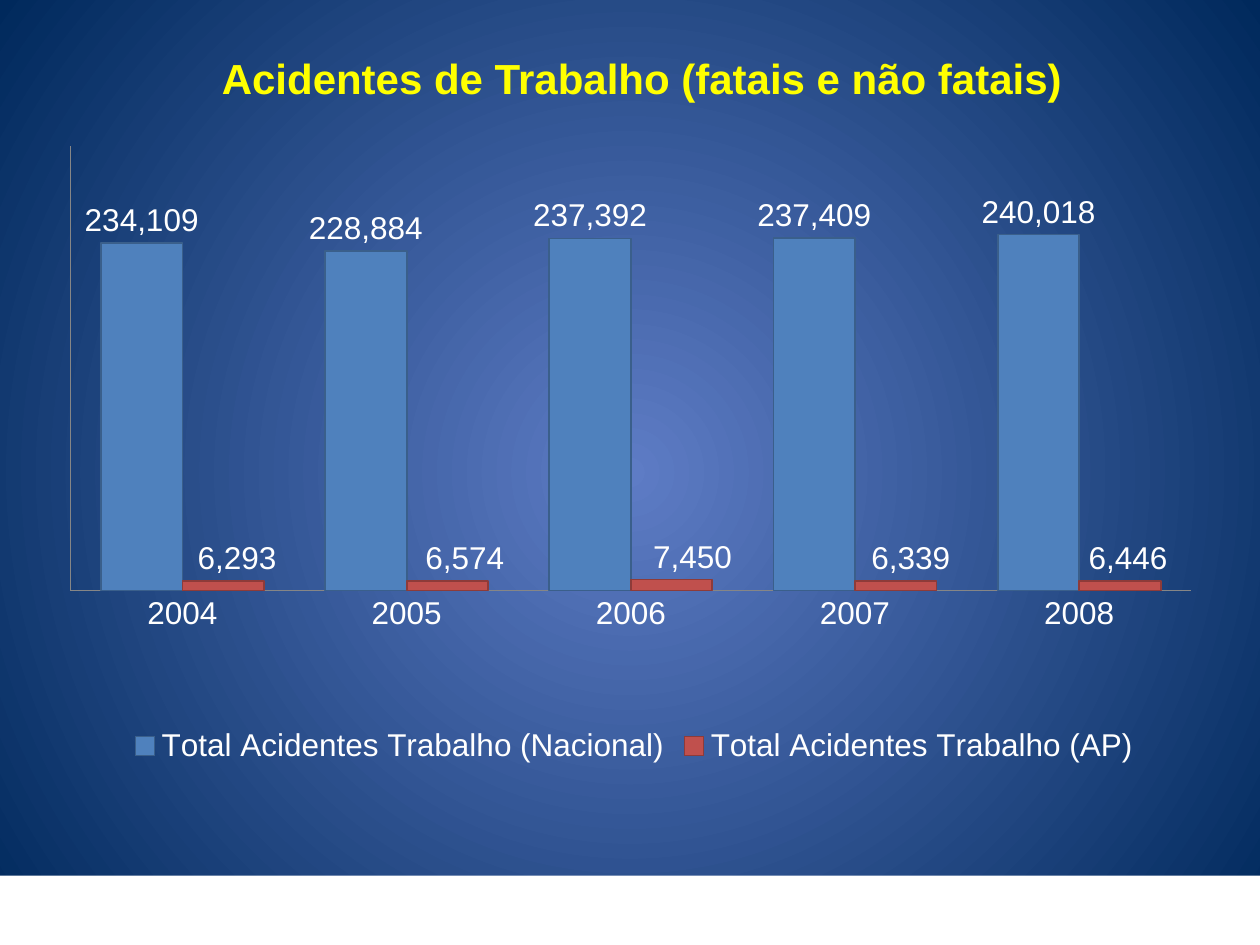
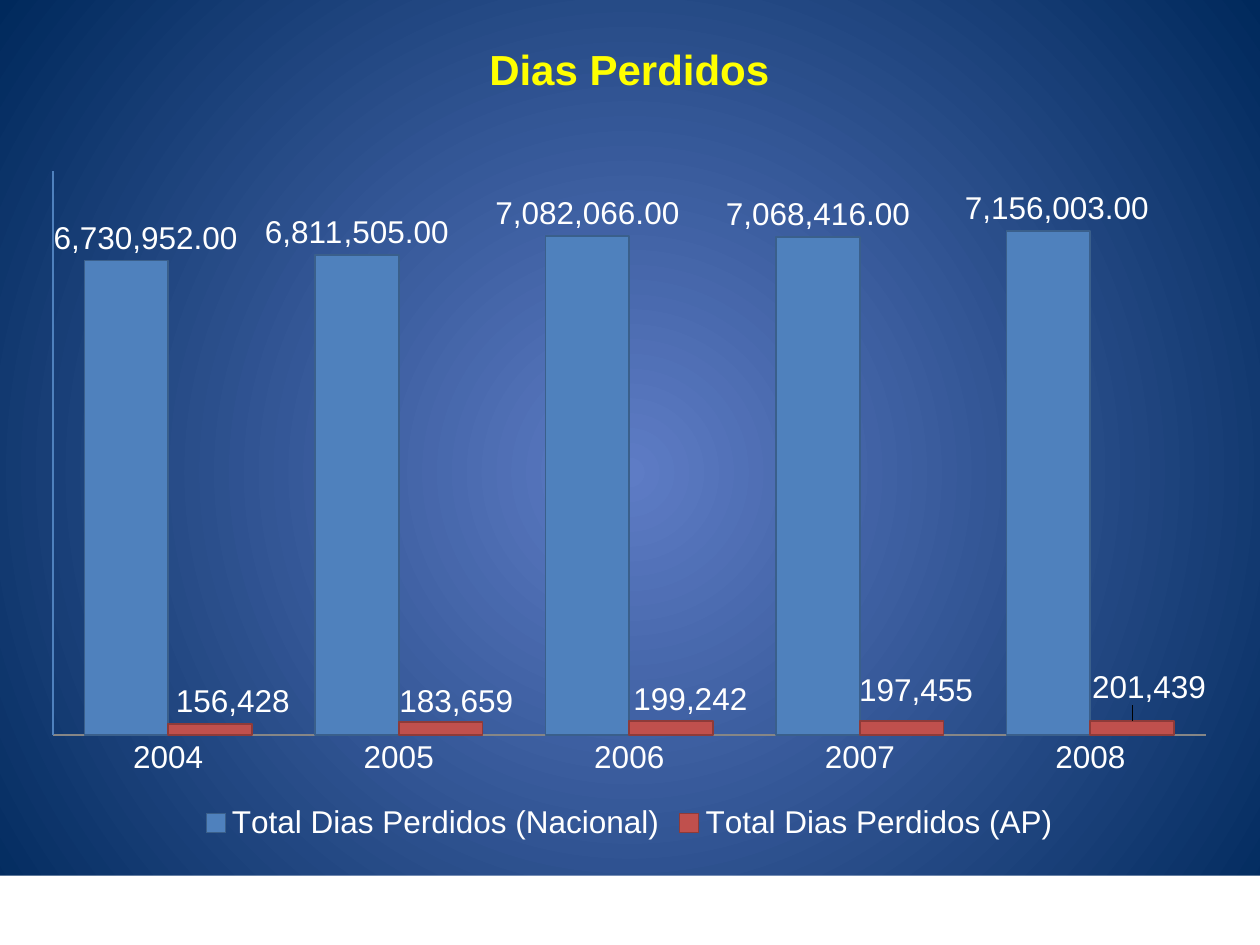
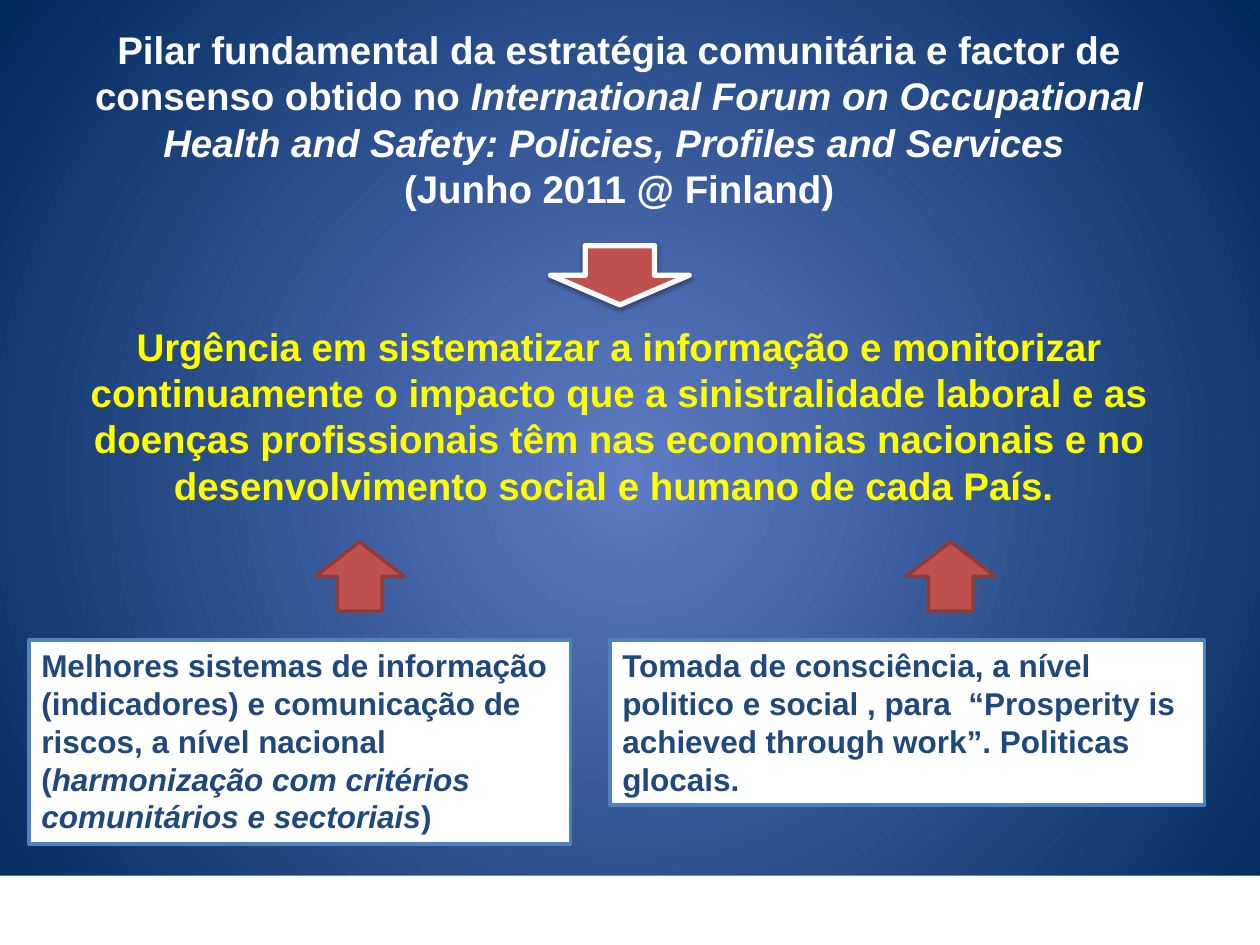
from pptx import Presentation
from pptx.chart.data import CategoryChartData
from pptx.dml.color import RGBColor
from pptx.enum.chart import (XL_CHART_TYPE, XL_LABEL_POSITION, XL_LEGEND_POSITION,
                             XL_TICK_LABEL_POSITION, XL_TICK_MARK)
from pptx.enum.shapes import MSO_SHAPE
from pptx.enum.text import MSO_ANCHOR, PP_ALIGN
from pptx.oxml import parse_xml
from pptx.oxml.ns import nsdecls
from pptx.util import Inches, Pt

COLUMNS = XL_CHART_TYPE.COLUMN_CLUSTERED
OUTSIDE_END = XL_LABEL_POSITION.OUTSIDE_END
LEGEND_BOTTOM = XL_LEGEND_POSITION.BOTTOM
NO_TICK_LABELS = XL_TICK_LABEL_POSITION.NONE
NO_TICK = XL_TICK_MARK.NONE
RECTANGLE = MSO_SHAPE.RECTANGLE
DOWN_ARROW = MSO_SHAPE.DOWN_ARROW
UP_ARROW = MSO_SHAPE.UP_ARROW
TOP = MSO_ANCHOR.TOP
CENTER, LEFT = PP_ALIGN.CENTER, PP_ALIGN.LEFT

FONT = "Arial"
WHITE, YELLOW, NAVY = "FFFFFF", "FFFF00", "1F497D"
BLUE, BLUE_EDGE = "4F81BD", "3A5F8B"
RED, RED_EDGE = "C0504D", "8E3B39"
AXIS_GREY = "868686"
GLOW_CENTER, GLOW_EDGE = "5E7CC5", "00295C"

YEARS = ["2004", "2005", "2006", "2007", "2008"]
THOUSANDS, DECIMALS = "#,##0", "#,##0.00"


def color(hex_string):
    return RGBColor.from_string(hex_string)


def place(box):
    return [Inches(length) for length in box]


def style_font(font, size, hex_color, bold=False, italic=False):
    font.name = FONT
    font.size = Pt(size)
    font.bold = bold
    font.italic = italic
    font.color.rgb = color(hex_color)


def add_block(slide, kind, box, fill, line=None, line_width=2):
    block = slide.shapes.add_shape(kind, *place(box))
    block.shadow.inherit = False
    block.fill.solid()
    block.fill.fore_color.rgb = color(fill)
    if line:
        block.line.color.rgb = color(line)
        block.line.width = Pt(line_width)
    else:
        block.line.fill.background()
    return block


def write(paragraph, segments, size, hex_color, align):
    """Fill a paragraph with bold (text, italic) segments."""
    paragraph.alignment = align
    for text, italic in segments:
        run = paragraph.add_run()
        run.text = text
        style_font(run.font, size, hex_color, bold=True, italic=italic)


def add_text_box(slide, box):
    frame = slide.shapes.add_textbox(*place(box)).text_frame
    frame.word_wrap = True
    return frame


def set_master_background(master):
    content = master.element.cSld
    for background in content.xpath("p:bg"):
        content.remove(background)
    content.insert(0, parse_xml(
        f'<p:bg {nsdecls("p", "a")}><p:bgPr><a:gradFill rotWithShape="1"><a:gsLst>'
        f'<a:gs pos="0"><a:srgbClr val="{GLOW_CENTER}"/></a:gs>'
        f'<a:gs pos="100000"><a:srgbClr val="{GLOW_EDGE}"/></a:gs></a:gsLst>'
        '<a:path path="circle"><a:fillToRect l="50000" t="50000" r="50000" b="50000"/>'
        '</a:path></a:gradFill><a:effectLst/></p:bgPr></p:bg>'))


def add_master_band(master, slide):
    """Build the footer band on a slide, then hand it to the master."""
    band = add_block(slide, RECTANGLE, (0, 6.95, 10, 0.55), WHITE).element
    band.nvSpPr.cNvPr.set("id", "100")
    master.shapes.element.insert(2, band)


def add_title(slide, box, text):
    write(add_text_box(slide, box).paragraphs[0], [(text, False)], 24, YELLOW, CENTER)


def manual_layout(**settings):
    entries = "".join(f'<c:{tag} val="{value}"/>' for tag, value in settings.items())
    return parse_xml(f'<c:layout {nsdecls("c")}><c:manualLayout>{entries}'
                     '</c:manualLayout></c:layout>')


def style_axes(chart, maximum, value_line):
    for axis, line in ((chart.category_axis, AXIS_GREY), (chart.value_axis, value_line)):
        axis.has_major_gridlines = False
        axis.major_tick_mark = axis.minor_tick_mark = NO_TICK
        axis.format.line.color.rgb = color(line)
        axis.format.line.width = Pt(0.75)
    chart.value_axis.tick_label_position = NO_TICK_LABELS
    chart.value_axis.minimum_scale = 0
    chart.value_axis.maximum_scale = maximum


def style_series(series, fill, edge, number_format):
    series.format.fill.solid()
    series.format.fill.fore_color.rgb = color(fill)
    series.format.line.color.rgb = color(edge)
    series.format.line.width = Pt(1)
    labels = series.data_labels
    labels.show_value = True
    labels.position = OUTSIDE_END
    labels.number_format = number_format
    labels.number_format_is_linked = False
    style_font(labels.font, 18, WHITE)


def shift_labels(chart, series_index, offsets):
    """Nudge labels by (dx, dy), given as shares of the chart size per point."""
    series = chart.plots[0].series[series_index]
    for point in offsets:
        series.points[point].data_label.position = OUTSIDE_END
    for label in chart._chartSpace.xpath(f".//c:ser[{series_index + 1}]//c:dLbl"):
        dx, dy = offsets[label.idx.val]
        label.insert(1, manual_layout(x=dx, y=dy))


def add_column_chart(slide, box, rows, maximum, plot_box, value_line):
    """Rows hold series name, values, number format and label offsets."""
    data = CategoryChartData()
    data.categories = YEARS
    for name, values, number_format, _ in rows:
        data.add_series(name, values, number_format)
    chart = slide.shapes.add_chart(COLUMNS, *place(box), data).chart
    chart.has_title = False
    style_font(chart.font, 18, WHITE)
    chart.has_legend = True
    chart.legend.position = LEGEND_BOTTOM
    chart.legend.include_in_layout = False
    style_axes(chart, maximum, value_line)

    plot = chart.plots[0]
    plot.gap_width = 75
    plot.overlap = 0
    plot.vary_by_categories = False
    palette = ((BLUE, BLUE_EDGE), (RED, RED_EDGE))
    for index, ((_, _, number_format, offsets), (fill, edge)) in enumerate(zip(rows, palette)):
        style_series(plot.series[index], fill, edge, number_format)
        shift_labels(chart, index, offsets)

    area = chart._chartSpace.xpath(".//c:plotArea")[0]
    for layout in area.xpath("c:layout"):
        area.remove(layout)
    x, y, w, h = plot_box
    area.insert(0, manual_layout(layoutTarget="inner", xMode="edge", yMode="edge",
                                 x=x, y=y, w=w, h=h))


def build_accidents(slide):
    add_title(slide, (0.33, 0.37, 9.53, 0.5), "Acidentes de Trabalho (fatais e não fatais)")
    shifts = (0.012, 0.015, 0.018, 0.013, 0.007)
    rows = [
        ("Total Acidentes Trabalho (Nacional)",
         (234109, 228884, 237392, 237409, 240018), THOUSANDS, {}),
        ("Total Acidentes Trabalho (AP)",
         (6293, 6574, 7450, 6339, 6446), THOUSANDS,
         {point: (dx, 0) for point, dx in enumerate(shifts)}),
    ]
    add_column_chart(slide, (0.43, 1.15, 9.21, 4.96), rows, 300000,
                     (0.014, 0, 0.966, 0.713), AXIS_GREY)


def build_lost_days(slide):
    add_title(slide, (0.23, 0.3, 9.53, 0.5), "Dias Perdidos")
    shifts = ((0.019, 0), (0.013, 0.003), (0.016, 0.001), (0.012, -0.012), (0.014, -0.015))
    rows = [
        ("Total Dias Perdidos (Nacional)",
         (6730952, 6811505, 7082066, 7068416, 7156003), DECIMALS,
         {0: (0.016, 0), 4: (0.007, 0)}),
        ("Total Dias Perdidos (AP)",
         (156428, 183659, 199242, 197455, 201439), THOUSANDS, dict(enumerate(shifts))),
    ]
    add_column_chart(slide, (0.23, 1.25, 9.53, 5.47), rows, 8000000,
                     (0.02, 0.02, 0.96, 0.818), BLUE)


def add_message(slide, box):
    frame = add_text_box(slide, box)
    write(frame.paragraphs[0], [
        ("Pilar fundamental da estratégia comunitária e factor de consenso obtido no ", False),
        ("International Forum on Occupational Health and Safety: "
         "Policies, Profiles and Services ", True)], 22, WHITE, CENTER)
    write(frame.add_paragraph(), [("(Junho 2011 @ Finland)", False)], 22, WHITE, CENTER)
    urgency = frame.add_paragraph()
    urgency.space_before = Pt(64)
    write(urgency, [
        ("Urgência em sistematizar a informação e monitorizar continuamente o impacto que a "
         "sinistralidade laboral e as doenças profissionais têm nas economias nacionais e no "
         "desenvolvimento social e humano de cada País. ", False)], 22, YELLOW, CENTER)


def add_consequence_arrow(slide, box):
    arrow = add_block(slide, DOWN_ARROW, box, RED, WHITE, 3)
    effects = arrow.element.spPr.xpath("a:effectLst")[0]
    effects.append(parse_xml(
        f'<a:outerShdw {nsdecls("a")} blurRad="{Pt(3.1)}" dist="{Pt(1.6)}" dir="5400000" '
        'rotWithShape="0"><a:srgbClr val="000000"><a:alpha val="38000"/></a:srgbClr>'
        '</a:outerShdw>'))


def add_support(slide, box, segments, arrow_left):
    """Add a white panel and the arrow that rises from it."""
    frame = add_block(slide, RECTANGLE, box, WHITE, BLUE).text_frame
    frame.word_wrap = True
    frame.vertical_anchor = TOP
    write(frame.paragraphs[0], segments, 18, NAVY, LEFT)
    add_block(slide, UP_ARROW, (arrow_left, box[1] - 0.78, 0.71, 0.55), RED, RED_EDGE)


def build_strategy(slide):
    add_message(slide, (0.23, 0.16, 9.37, 5.44))
    add_consequence_arrow(slide, (4.37, 1.95, 1.1, 0.47))
    add_support(slide, (0.23, 5.08, 4.3, 1.62), [
        ("Melhores sistemas de informação (indicadores) e comunicação de riscos, "
         "a nível nacional (", False),
        ("harmonização com critérios comunitários e sectoriais", True),
        (")", False)], 2.5)
    add_support(slide, (4.84, 5.08, 4.72, 1.31), [
        ("Tomada de consciência, a nível politico e social , para  “Prosperity is achieved "
         "through work”. Politicas glocais.", False)], 7.19)


def main():
    deck = Presentation()
    deck.slide_width, deck.slide_height = Inches(10), Inches(7.5)
    blank = deck.slide_layouts[6]
    set_master_background(deck.slide_master)
    slides = [deck.slides.add_slide(blank) for _ in range(3)]
    add_master_band(deck.slide_master, slides[0])
    for slide, build in zip(slides, (build_accidents, build_lost_days, build_strategy)):
        build(slide)
    deck.save("out.pptx")


if __name__ == "__main__":
    main()
